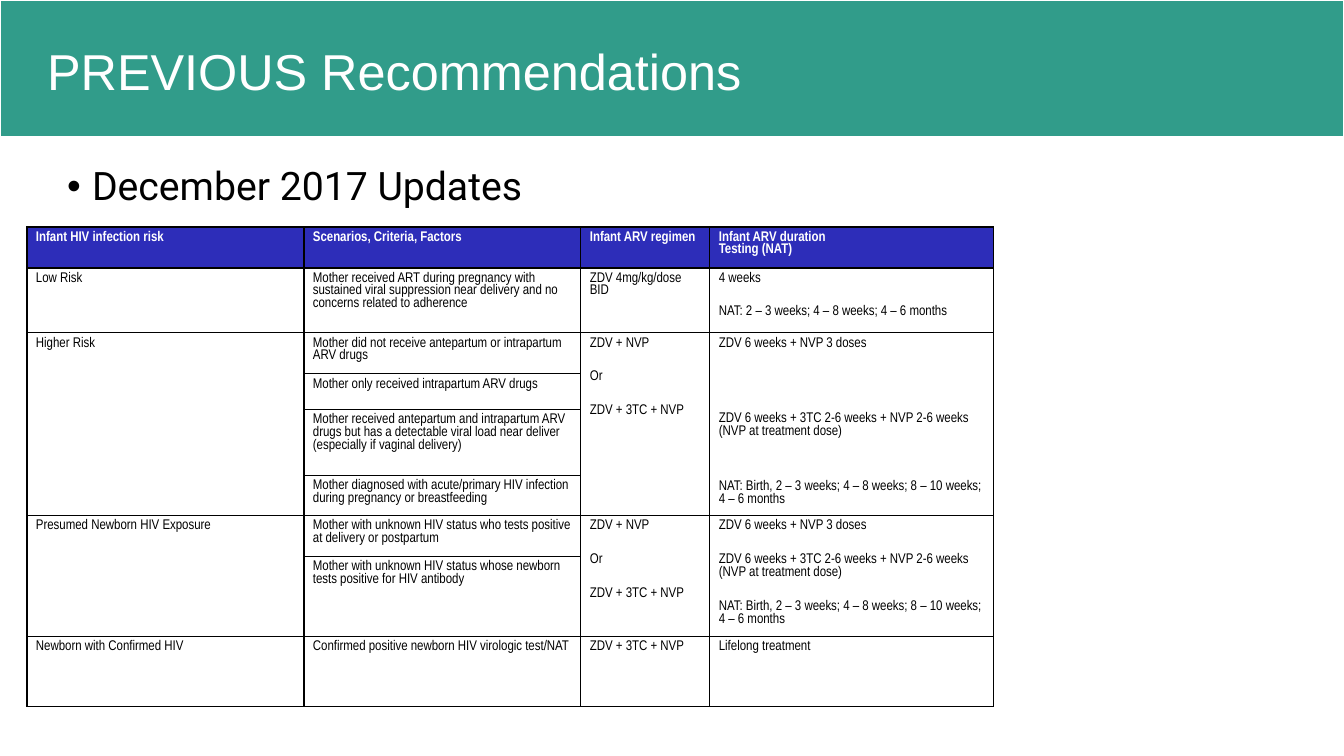
import pptx
import pptx.util
import pptx.dml.color
import pptx.enum.text
import pptx.oxml
import pptx.oxml.ns
from lxml import etree

PX = 12192000 / 1344
INK = {"band": "319C8A", "head": "2D2DB9", "white": "FFFFFF", "black": "000000"}
ALIGN = pptx.enum.text.PP_ALIGN
ANCHOR = pptx.enum.text.MSO_ANCHOR
GAP = 15

COLS = [277, 277, 129, 284]
ROWS = [41, 65, 41, 36, 66, 40, 41, 80, 70]
SPANS = [(2, 5), (6, 7)]
HEADS = [
    ["Infant HIV infection risk"],
    ["Scenarios, Criteria, Factors"],
    ["Infant ARV regimen"],
    ["Infant ARV duration", "Testing (NAT)"],
]
RISKS = {
    1: "Low Risk",
    2: "Higher Risk",
    6: "Presumed Newborn HIV Exposure",
    8: "Newborn with Confirmed HIV",
}
CASES = [
    "Mother received ART during pregnancy with sustained viral suppression near delivery and no concerns related to adherence",
    "Mother did not receive antepartum or intrapartum ARV drugs",
    "Mother only received intrapartum ARV drugs",
    "Mother received antepartum and intrapartum ARV drugs but has a detectable viral load near deliver (especially if vaginal delivery)",
    "Mother diagnosed with acute/primary HIV infection during pregnancy or breastfeeding",
    "Mother with unknown HIV status who tests positive at delivery or postpartum",
    "Mother with unknown HIV status whose newborn tests positive for HIV antibody",
    "Confirmed positive newborn HIV virologic test/NAT",
]
DRUGS = ["ZDV + NVP", (1, "Or"), (1, "ZDV + 3TC + NVP")]
REGIMENS = {1: ["ZDV 4mg/kg/dose BID"], 2: DRUGS, 6: DRUGS, 8: ["ZDV + 3TC + NVP"]}


def course(first, second):
    return [
        "ZDV 6 weeks + NVP 3 doses",
        (first, "ZDV 6 weeks + 3TC 2-6 weeks + NVP 2-6 weeks"),
        "(NVP at treatment dose)",
        (second, "NAT: Birth, 2 – 3 weeks; 4 – 8 weeks; 8 – 10 weeks; 4 – 6 months"),
    ]


TIMES = {
    1: ["4 weeks", (1, "NAT: 2 – 3 weeks; 4 – 8 weeks; 4 – 6 months")],
    2: course(3, 2),
    6: course(1, 1),
    8: ["Lifelong treatment"],
}


def px(num):
    return round(num * PX)


def tint(name):
    return pptx.dml.color.RGBColor.from_string(INK[name])


def place(shape, box):
    shape.left, shape.top, shape.width, shape.height = map(px, box)


def write(frame, lines, font="Arial Narrow", size=10, color="black", bold=False,
          space=None, bullet=None):
    frame.word_wrap = True
    for num, line in enumerate(lines):
        gap, words = line if isinstance(line, tuple) else (0, line)
        para = frame.paragraphs[0] if num == 0 else frame.add_paragraph()
        para.alignment = ALIGN.LEFT
        para.space_before = pptx.util.Pt(gap * GAP)
        if space:
            para.line_spacing = space
        if bullet:
            props = para._p.get_or_add_pPr()
            props.set("marL", str(px(25)))
            props.set("indent", str(-px(25)))
            mark = etree.SubElement(props, pptx.oxml.ns.qn("a:buChar"))
            mark.set("char", bullet)
        run = para.add_run()
        run.text = words
        run.font.name = font
        run.font.size = pptx.util.Pt(size)
        run.font.bold = bold
        run.font.color.rgb = tint(color)


def edge(cell, color, **widths):
    props = cell._tc.get_or_add_tcPr()
    for side in "LRTB":
        line = etree.SubElement(props, pptx.oxml.ns.qn("a:ln" + side))
        line.set("w", str(pptx.util.Pt(widths[side])))
        fill = etree.SubElement(line, pptx.oxml.ns.qn("a:solidFill"))
        etree.SubElement(fill, pptx.oxml.ns.qn("a:srgbClr")).set("val", INK[color])


def paint(cell, color=None):
    if color:
        cell.fill.solid()
        cell.fill.fore_color.rgb = tint(color)
    else:
        cell.fill.background()


def grid(slide, box, cols, rows):
    frame = slide.shapes.add_table(len(rows), len(cols), *map(px, box))
    table = frame.table
    table.first_row = table.horz_banding = False
    for col, wide in zip(table.columns, cols):
        col.width = px(wide)
    for row, high in zip(table.rows, rows):
        row.height = px(high)
    return frame


def banner(slide, box):
    left, top, wide, high = box
    frame = grid(slide, box, [wide], [high])
    cell = frame.table.cell(0, 0)
    edge(cell, "white", L=1, R=1, T=1, B=3)
    paint(cell, "band")
    title = slide.shapes.title
    place(title, (left + 37, top + 24, 1159, 101))
    title.text_frame.auto_size = pptx.enum.text.MSO_AUTO_SIZE.NONE
    title.text_frame.vertical_anchor = ANCHOR.MIDDLE
    write(title.text_frame, ["PREVIOUS Recommendations"], font="Arial", size=36,
          color="white", space=0.9)
    slide.shapes[0].element.addprevious(frame.element)


def topic(slide, box):
    body = slide.placeholders[1]
    place(body, box)
    body.text_frame.auto_size = pptx.enum.text.MSO_AUTO_SIZE.NONE
    write(body.text_frame, ["December 2017 Updates"], font="Roboto", size=28,
          space=0.9, bullet="•")


def advice(slide, box):
    table = grid(slide, box, COLS, ROWS).table
    last = len(COLS) - 1
    for r in range(len(ROWS)):
        for c in range(len(COLS)):
            cell = table.cell(r, c)
            edge(cell, "black", L=1 if c else 0.88, R=1 if c < last else 0.88,
                 T=0.88, B=0.88)
            paint(cell, None if r else "head")
            cell.margin_left = cell.margin_right = px(9)
            cell.margin_top = cell.margin_bottom = px(4)
    for first, final in SPANS:
        for c in (0, 2, 3):
            table.cell(first, c).merge(table.cell(final, c))
    for c, lines in enumerate(HEADS):
        write(table.cell(0, c).text_frame, lines, color="white", bold=True)
    for r, words in enumerate(CASES, 1):
        write(table.cell(r, 1).text_frame, [words])
    for r, risk in RISKS.items():
        for c, lines in ((0, [risk]), (2, REGIMENS[r]), (3, TIMES[r])):
            write(table.cell(r, c).text_frame, lines)


def main():
    deck = pptx.Presentation()
    deck.slide_width, deck.slide_height = px(1344), px(756)
    slide = deck.slides.add_slide(deck.slide_layouts[1])
    banner(slide, (0, 0, 1344, 138))
    topic(slide, (57, 162, 1194, 518))
    advice(slide, (27, 227, sum(COLS), sum(ROWS)))
    deck.save("out.pptx")


if __name__ == "__main__":
    main()
